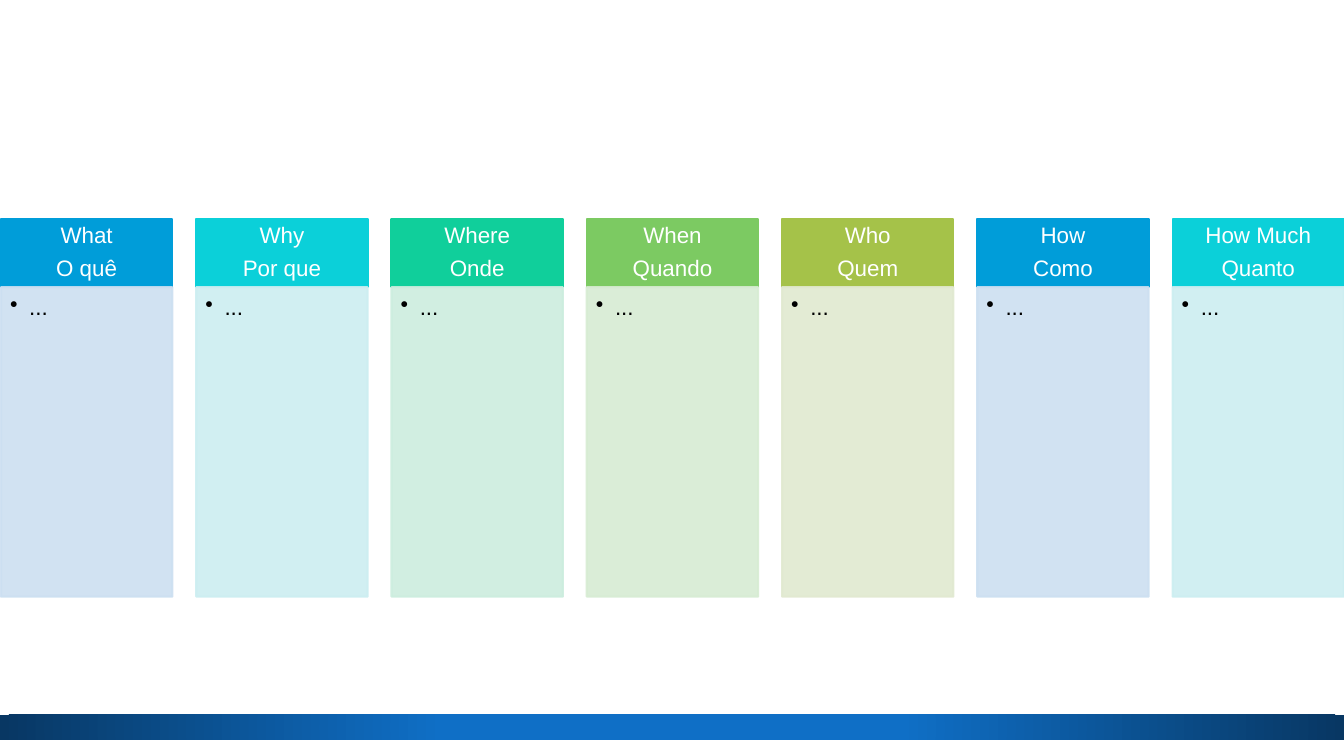
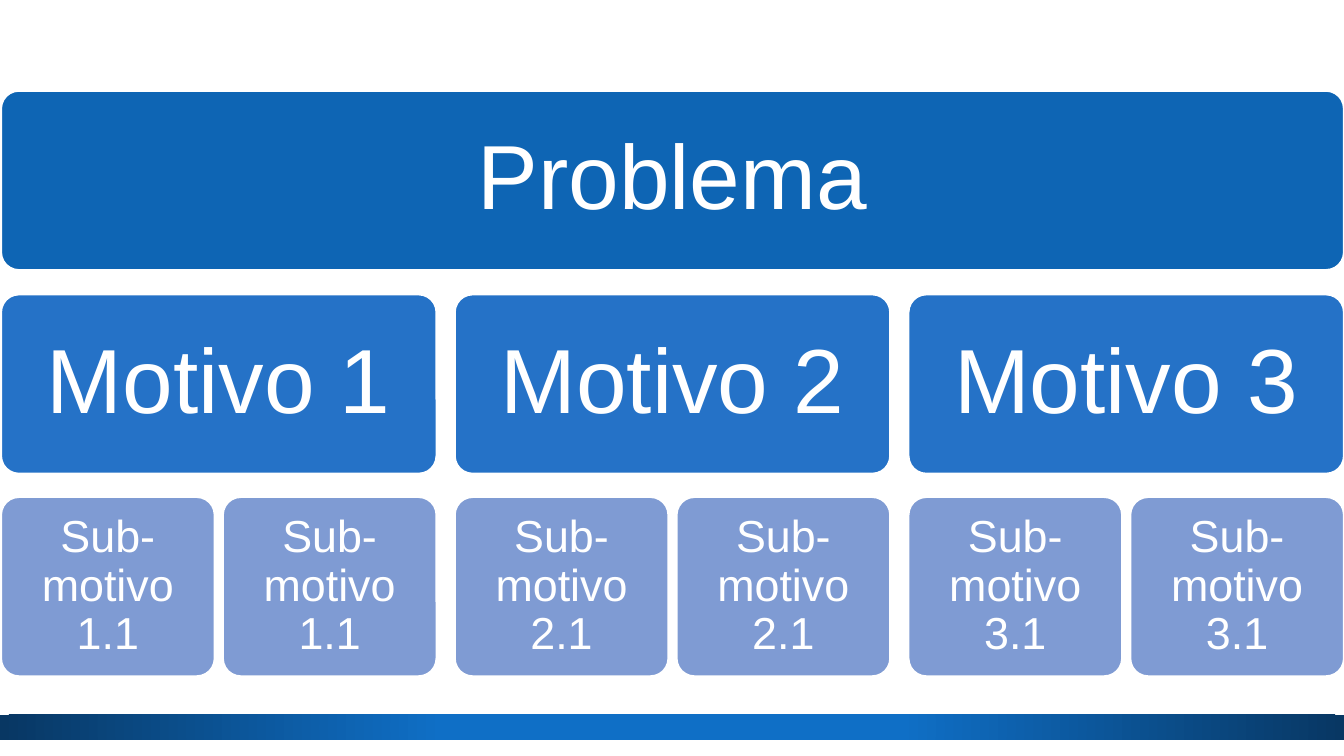
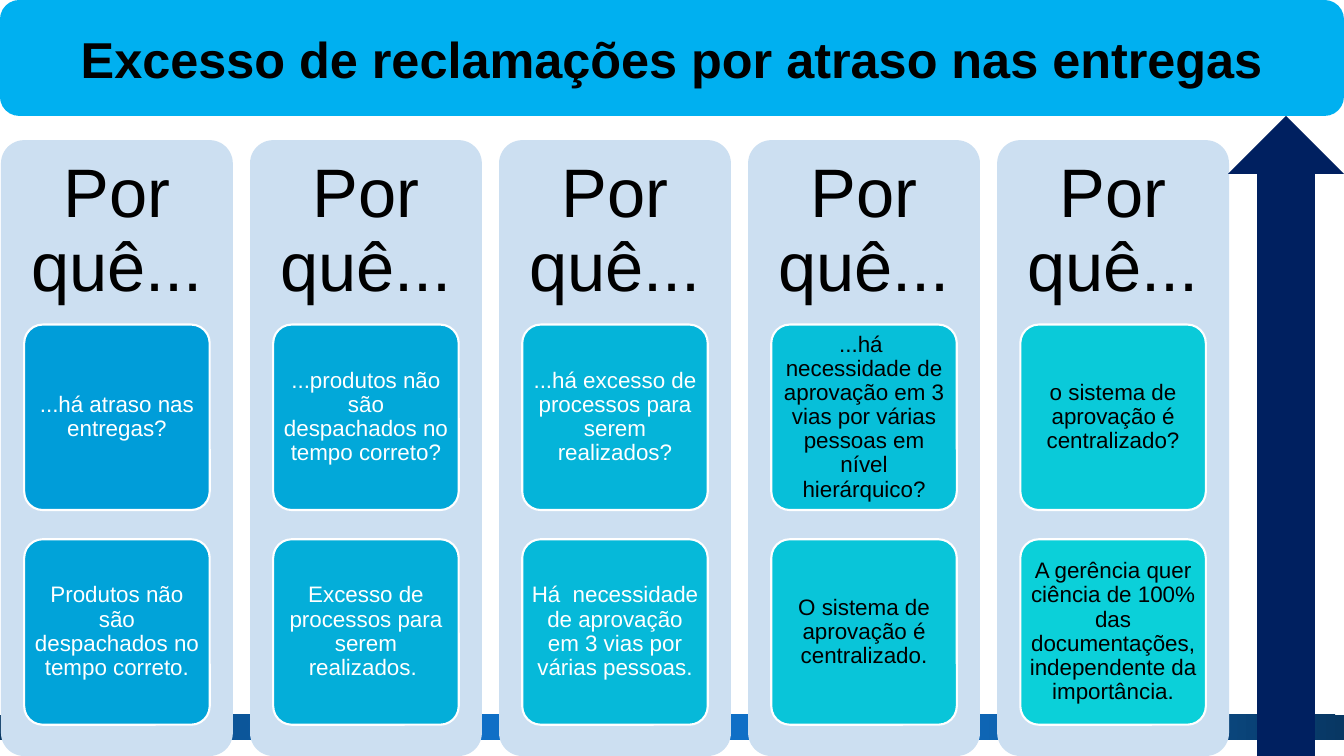
"""Build three problem-solving slides: 5W2H, cause tree and five whys."""
from dataclasses import dataclass, field
from typing import Any

from lxml.etree import SubElement
from pptx import Presentation
from pptx.dml.color import RGBColor
from pptx.enum.shapes import MSO_SHAPE
from pptx.enum.text import MSO_ANCHOR, PP_ALIGN
from pptx.oxml.ns import qn
from pptx.util import Inches, Pt


@dataclass(frozen=True)
class Theme:
    font: str = "Arial"
    white: str = "FFFFFF"
    black: str = "000000"
    band_center: str = "0F6FC6"
    band_edge: str = "083763"
    problem: str = "0E65B4"
    reason: str = "2572C7"
    subreason: str = "7F9BD3"
    panel: str = "CCDFF1"
    banner: str = "00B0F0"
    arrow: str = "002060"
    blue: str = "009DD9"
    cyan: str = "0BD0D9"
    green: str = "10CF9B"
    leaf: str = "7CCA62"
    olive: str = "A5C249"
    cyan_tint: str = "CCEEF1"
    green_tint: str = "CCEDDE"
    leaf_tint: str = "D7ECD3"
    olive_tint: str = "E1E9D0"
    small: int = 16
    medium: int = 32
    banner_size: int = 36
    why_size: int = 49
    large: int = 65
    outline: float = 1.5


THEME = Theme()


@dataclass(frozen=True)
class Frame:
    left: float
    top: float
    width: float
    height: float

    def lengths(self) -> list[int]:
        return [Inches(value) for value in (self.left, self.top, self.width, self.height)]


@dataclass(frozen=True)
class TextStyle:
    size: int
    color: str = THEME.white
    insets: tuple[float, float, float, float] = (0.1, 0.05, 0.1, 0.05)
    spacing: float = 0.9
    font: dict[str, Any] = field(default_factory=dict)
    anchor: MSO_ANCHOR = MSO_ANCHOR.MIDDLE
    align: PP_ALIGN = PP_ALIGN.CENTER
    bullet: bool = False


@dataclass(frozen=True)
class Question:
    english: str
    portuguese: str
    color: str
    tint: str


@dataclass(frozen=True)
class Why:
    question: str
    answer: str
    question_color: str = THEME.white
    answer_color: str = THEME.white


QUESTIONS = [
    Question("What", "O quê", THEME.blue, THEME.panel),
    Question("Why", "Por que", THEME.cyan, THEME.cyan_tint),
    Question("Where", "Onde", THEME.green, THEME.green_tint),
    Question("When", "Quando", THEME.leaf, THEME.leaf_tint),
    Question("Who", "Quem", THEME.olive, THEME.olive_tint),
    Question("How", "Como", THEME.blue, THEME.panel),
    Question("How Much", "Quanto", THEME.cyan, THEME.cyan_tint),
]

WHYS = [
    Why("...há atraso nas entregas?", "Produtos não são despachados no tempo correto."),
    Why("...produtos não são despachados no tempo correto?",
        "Excesso de processos para serem realizados. "),
    Why("...há excesso de processos para serem realizados?",
        "Há  necessidade de aprovação em 3 vias por várias pessoas."),
    Why("...há  necessidade de aprovação em 3 vias por várias pessoas em nível hierárquico?",
        "O sistema de aprovação é centralizado.", THEME.black, THEME.black),
    Why("o sistema de aprovação é centralizado?",
        "A gerência quer ciência de 100% das documentações, independente da importância.",
        THEME.black, THEME.black),
]


def apply_format(target: Any, values: dict[str, Any]) -> None:
    """Set each named attribute on the target."""
    for name, value in values.items():
        setattr(target, name, value)


def write_text(box: Any, lines: list[str], style: TextStyle) -> None:
    """Fill a shape with one paragraph per line."""
    frame = box.text_frame
    sides = ("margin_left", "margin_top", "margin_right", "margin_bottom")
    apply_format(frame, {"word_wrap": True, "vertical_anchor": style.anchor})
    apply_format(frame, dict(zip(sides, map(Inches, style.insets))))
    for index, line in enumerate(lines):
        para = frame.add_paragraph() if index else frame.paragraphs[0]
        apply_format(para, {"alignment": style.align, "line_spacing": style.spacing})
        if index:
            para.space_before = Pt(0.4 * style.size)
        if style.bullet:
            properties = para._p.get_or_add_pPr()
            properties.set("marL", str(Inches(0.19)))
            properties.set("indent", str(Inches(-0.19)))
            SubElement(properties, qn("a:buChar"), char="•")
        span = para.add_run()
        span.text = line
        apply_format(span.font, {"name": THEME.font, "size": Pt(style.size), **style.font})
        span.font.color.rgb = RGBColor.from_string(style.color)


def add_box(page: Any, kind: MSO_SHAPE, frame: Frame, fill: str, line: str | None = None,
            rounding: float | None = None, opacity: int = 100) -> Any:
    """Add a flat preset shape with a solid fill."""
    box = page.shapes.add_shape(kind, *frame.lengths())
    box.shadow.inherit = False
    box.fill.solid()
    box.fill.fore_color.rgb = RGBColor.from_string(fill)
    if line:
        box.line.color.rgb = RGBColor.from_string(line)
        box.line.width = Pt(THEME.outline)
    else:
        box.line.fill.background()
    if rounding is not None:
        box.adjustments[0] = rounding
    if opacity < 100:
        for color in box._element.spPr.iter(qn("a:srgbClr")):
            SubElement(color, qn("a:alpha"), val=str(opacity * 1000))
    return box


def add_card(page: Any, frame: Frame, fill: str, text: str, style: TextStyle) -> None:
    """Add a white-edged rounded card with centred text."""
    card = add_box(page, MSO_SHAPE.ROUNDED_RECTANGLE, frame, fill, THEME.white, 0.1)
    write_text(card, [text], style)


def add_page(deck: Any) -> Any:
    """Add a blank page with the shared gradient band."""
    page = deck.slides.add_slide(deck.slide_layouts[6])
    band = add_box(page, MSO_SHAPE.RECTANGLE, Frame(0, 7.09, 13.33, 0.25), THEME.band_center)
    band.fill.gradient()
    stops = ((0.34, THEME.band_center), (1, THEME.band_edge))
    for stop, (position, color) in zip(band.fill.gradient_stops, stops):
        stop.position = position
        stop.color.rgb = RGBColor.from_string(color)
    gradient = band._element.spPr.find(qn("a:gradFill"))
    gradient.remove(gradient.find(qn("a:lin")))
    circle = SubElement(gradient, qn("a:path"), path="circle")
    SubElement(circle, qn("a:fillToRect"), l="50000", t="50000", r="50000", b="50000")
    return page


def build_questions(deck: Any) -> None:
    """Draw the seven 5W2H columns."""
    page = add_page(deck)
    header_style = TextStyle(THEME.small, insets=(0.12, 0.07, 0.12, 0.07))
    body_style = TextStyle(THEME.small, THEME.black, (0.09, 0.09, 0.12, 0.14),
                           anchor=MSO_ANCHOR.TOP, align=PP_ALIGN.LEFT, bullet=True)
    pitch = 11.62 / (len(QUESTIONS) - 1)
    for index, question in enumerate(QUESTIONS):
        left = 0.01 + index * pitch
        header = add_box(page, MSO_SHAPE.RECTANGLE, Frame(left, 2.17, 1.7, 0.68),
                         question.color, question.color)
        write_text(header, [question.english, question.portuguese], header_style)
        body = add_box(page, MSO_SHAPE.RECTANGLE, Frame(left, 2.85, 1.7, 3.07),
                       question.tint, question.tint, opacity=90)
        write_text(body, ["..."], body_style)


def build_cause_tree(deck: Any) -> None:
    """Draw the problem, its reasons and their sub-reasons."""
    page = add_page(deck)
    large = TextStyle(THEME.large, insets=(0.27,) * 4)
    medium = TextStyle(THEME.medium, insets=(0.13,) * 4)
    left, height = 0.01, 1.78
    problem_top, reason_top, subreason_top = 0.9, 2.92, 4.93
    add_card(page, Frame(left, problem_top, 13.32, height), THEME.problem, "Problema", large)
    for number in range(1, 4):
        reason_left = left + (number - 1) * 4.5
        add_card(page, Frame(reason_left, reason_top, 4.32, height),
                 THEME.reason, f"Motivo {number}", large)
        for position in range(2):
            add_card(page, Frame(reason_left + position * 2.2, subreason_top, 2.12, height),
                     THEME.subreason, f"Sub-motivo {number}.1", medium)


def blend(start: str, end: str, share: float) -> str:
    """Return the colour at a share of the way from start to end."""
    pairs = zip(RGBColor.from_string(start), RGBColor.from_string(end))
    return str(RGBColor(*(round(low + (high - low) * share) for low, high in pairs)))


def build_whys(deck: Any) -> None:
    """Draw the five whys leading back to the complaint."""
    page = add_page(deck)
    title_style = TextStyle(THEME.why_size, THEME.black, (0.2,) * 4)
    last_step = 2 * len(WHYS) - 1
    for index, why in enumerate(WHYS):
        left = 0.01 + index * 2.47
        add_box(page, MSO_SHAPE.ROUNDED_RECTANGLE, Frame(left, 1.39, 2.3, 6.11),
                THEME.panel, rounding=0.1)
        title = page.shapes.add_textbox(*Frame(left, 1.39, 2.3, 1.83).lengths())
        write_text(title, ["Por quê..."], title_style)
        cards = ((why.question, why.question_color), (why.answer, why.answer_color))
        for row, (text, color) in enumerate(cards):
            fill = blend(THEME.blue, THEME.cyan, (2 * index + row) / last_step)
            add_card(page, Frame(left + 0.23, 3.22 + row * 2.13, 1.84, 1.84), fill, text,
                     TextStyle(THEME.small, color, (0.04, 0.03, 0.04, 0.03)))
    banner = add_box(page, MSO_SHAPE.ROUNDED_RECTANGLE, Frame(0, 0, 13.33, 1.15), THEME.banner)
    write_text(banner, ["Excesso de reclamações por atraso nas entregas"],
               TextStyle(THEME.banner_size, THEME.black, spacing=1.0, font={"bold": True}))
    add_box(page, MSO_SHAPE.UP_ARROW, Frame(12.18, 1.15, 1.15, 6.35), THEME.arrow)


def main() -> None:
    """Build and save the deck."""
    deck = Presentation()
    apply_format(deck, {"slide_width": Inches(13.33), "slide_height": Inches(7.5)})
    for build in (build_questions, build_cause_tree, build_whys):
        build(deck)
    deck.save("out.pptx")


if __name__ == "__main__":
    main()
